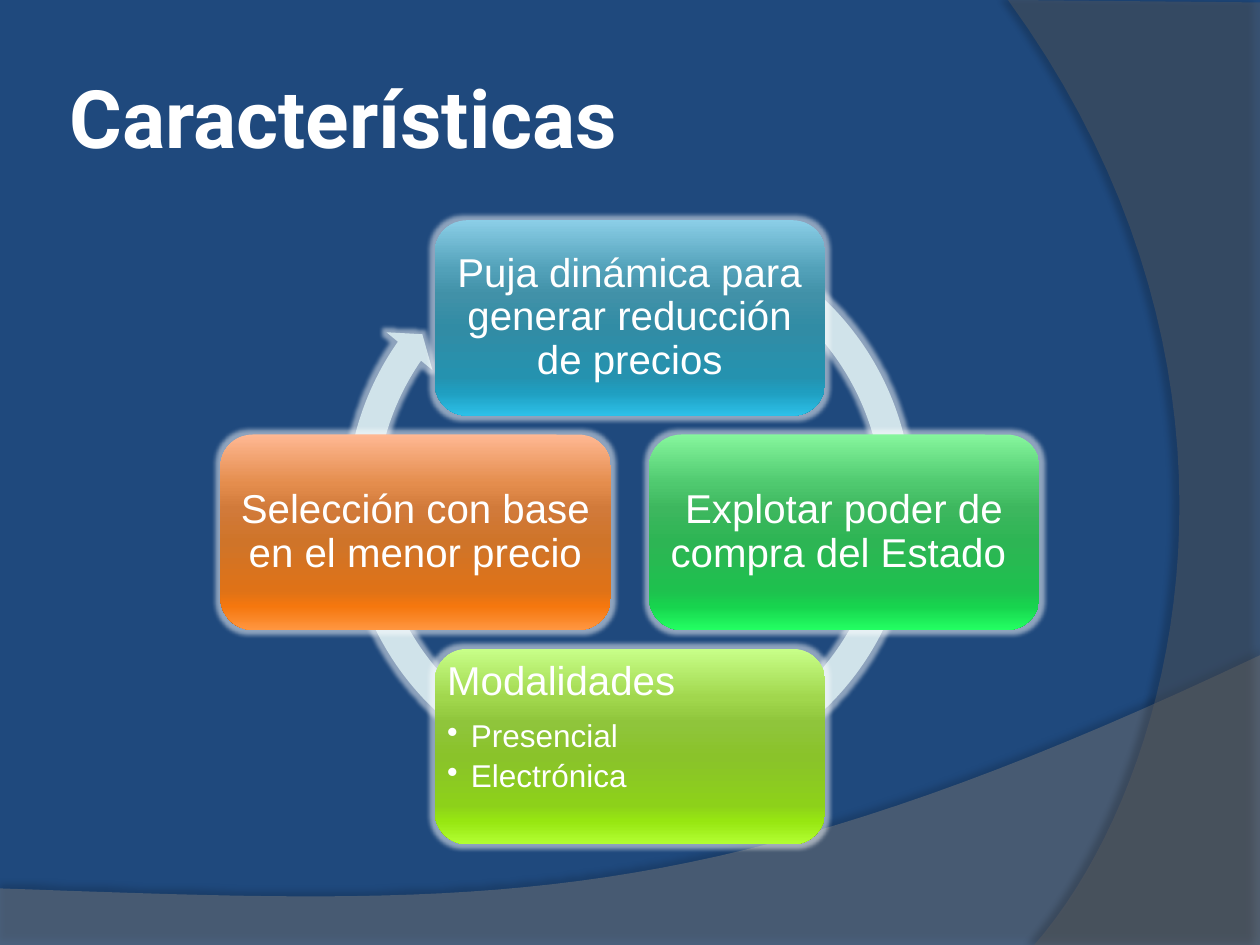
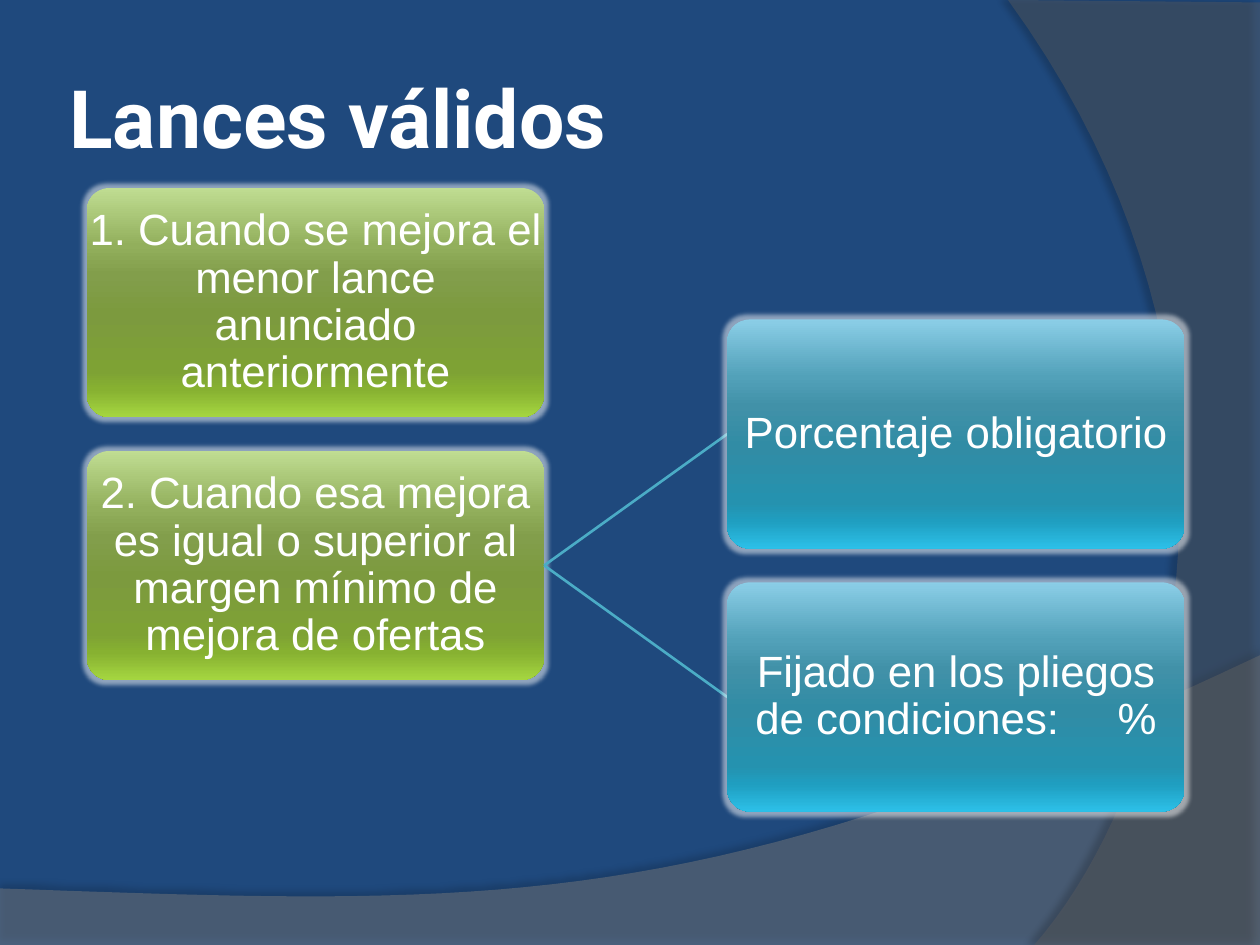
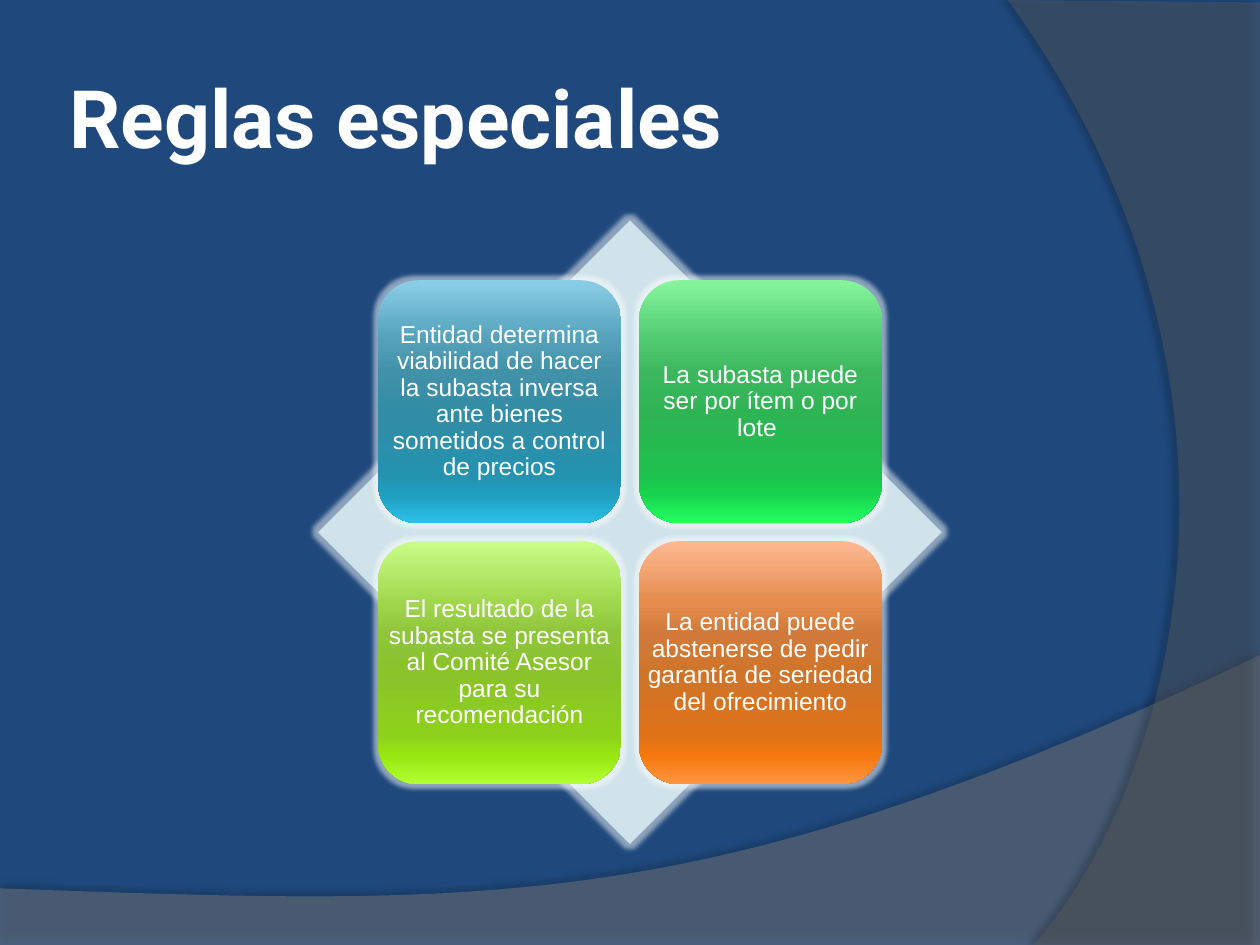
from lxml import etree
from pptx import Presentation
from pptx.dml.color import RGBColor
from pptx.enum import shapes, text
from pptx.oxml import ns
from pptx.util import Cm, Pt

COLORS = {
    "background": "1F497D",
    "wave": "7F7F7F",
    "crescent": "5E5E5E",
    "text": "FFFFFF",
    "glow": "FFFFFF",
    "shadow": "000000",
    "pale": "D0E3EA",
    "line": "4BACC6",
}
GRADIENT_STOPS = (0, 25, 38, 55, 80, 88, 100)
GRADIENTS = {
    "blue": "8BCEE7 52A1B9 4191A8 318CA5 2592AF 1F9EC0 2CC0E8",
    "green": "86F69D 4FC96F 3DB75E 2DB554 1EC14E 17D44E 23FF62",
    "lime": "C8FF89 A1D74D 8FC53B 8AC32A 8DD11A 97E611 B2FF32",
    "orange": "FFB893 E48D4D D17A3A CF7429 DF7217 F5770E FF9640",
    "olive": "C0DD92 92AF5C 829E4B 7C9A3E 7EA234 87B131 A5D640",
}
WIDTH, HEIGHT = 25.4, 19.05
CENTER_X, CENTER_Y = 12.7, 10.73
SHAPE = shapes.MSO_SHAPE


# XML helpers
def add_xml(parent, tag, **attributes):
    values = {name: str(value) for name, value in attributes.items()}
    return etree.SubElement(parent, ns.qn(tag), values)


def add_effect(shape, tag, color, alpha, **attributes):
    shape.shadow.inherit = False
    effects = shape.element.spPr.find(ns.qn("a:effectLst"))
    tint = add_xml(add_xml(effects, tag, **attributes), "a:srgbClr", val=color)
    add_xml(tint, "a:alpha", val=alpha * 1000)


# Text
def write(para, content, size=23, font="Arial", bold=False,
          align=text.PP_ALIGN.CENTER, spacing=0.9, after=0, bullet=False, tab=None):
    para.alignment = align
    para.line_spacing = spacing
    para.space_after = Pt(after)
    properties = para._p.get_or_add_pPr()
    if bullet:
        indent = Cm(0.48)
        properties.set("marL", str(indent))
        properties.set("indent", str(-indent))
        add_xml(properties, "a:buChar", char="•")
    if tab:
        add_xml(add_xml(properties, "a:tabLst"), "a:tab", pos=Cm(tab), algn="l")
    span = para.add_run()
    span.text = content
    span.font.size = Pt(size)
    span.font.name = font
    span.font.bold = bold
    span.font.color.rgb = RGBColor.from_string(COLORS["text"])


def set_frame(frame, inset, anchor):
    frame.word_wrap = True
    frame.auto_size = text.MSO_AUTO_SIZE.NONE
    frame.vertical_anchor = anchor
    frame.margin_left = frame.margin_right = Cm(inset)
    frame.margin_top = frame.margin_bottom = Cm(inset)


def add_label(page, frame_at, inset, anchor=text.MSO_ANCHOR.MIDDLE):
    box = page.shapes.add_textbox(*frame_at)
    set_frame(box.text_frame, inset, anchor)
    return box.text_frame


# Shapes, placed by their centre
def around(x, y, width, height):
    return Cm(x - width / 2), Cm(y - height / 2), Cm(width), Cm(height)


def add_glowing(page, kind, frame_at, adjustments=()):
    shape = page.shapes.add_shape(kind, *frame_at)
    for index, value in enumerate(adjustments):
        shape.adjustments[index] = value
    shape.line.fill.background()
    add_effect(shape, "a:glow", COLORS["glow"], 50, rad=Pt(5))
    return shape


def add_backdrop(page, kind, frame_at, adjustments=()):
    shape = add_glowing(page, kind, frame_at, adjustments)
    shape.fill.solid()
    shape.fill.fore_color.rgb = RGBColor.from_string(COLORS["pale"])


def add_card(page, frame_at, gradient, adjustments=()):
    card = add_glowing(page, SHAPE.ROUNDED_RECTANGLE, frame_at, adjustments)
    card.fill.gradient()
    card.fill.gradient_angle = 270
    stops = card.element.spPr.find(".//" + ns.qn("a:gsLst"))
    stops.clear()
    for position, color in zip(GRADIENT_STOPS, GRADIENTS[gradient].split()):
        add_xml(add_xml(stops, "a:gs", pos=position * 1000), "a:srgbClr", val=color)


def add_text_card(page, frame_at, gradient, content, inset, adjustments=(), **style):
    add_card(page, frame_at, gradient, adjustments)
    write(add_label(page, frame_at, inset).paragraphs[0], content, **style)


def add_link(page, start, end):
    link = page.shapes.add_connector(
        shapes.MSO_CONNECTOR.STRAIGHT, *(Cm(value) for value in start + end))
    link.line.color.rgb = RGBColor.from_string(COLORS["line"])
    link.line.width = Pt(1.5)
    add_xml(link.element.spPr, "a:effectLst")


# Shared design
def curve(a, b, c, d, steps=40):
    """Points along a cubic curve."""
    points = []
    for step in range(steps + 1):
        t = step / steps
        weights = ((1 - t) ** 3, 3 * t * (1 - t) ** 2, 3 * t * t * (1 - t), t ** 3)
        points.append(tuple(sum(w * p[axis] for w, p in zip(weights, (a, b, c, d)))
                            for axis in (0, 1)))
    return points


def add_master_band(page, master, order, points, color, opacity, shade, distance, direction):
    corners = [(Cm(x), Cm(y)) for x, y in points]
    builder = page.shapes.build_freeform(*corners[0])
    builder.add_line_segments(corners[1:], close=True)
    band = builder.convert_to_shape()
    band.fill.solid()
    band.fill.fore_color.rgb = RGBColor.from_string(COLORS[color])
    tint = band.element.spPr.find(ns.qn("a:solidFill"))[0]
    add_xml(tint, "a:alpha", val=opacity * 1000)
    band.line.fill.background()
    add_effect(band, "a:outerShdw", COLORS["shadow"], shade, blurRad=Pt(4),
               dist=Pt(distance), dir=direction * 60000, algn="ctr", rotWithShape=0)
    band.element.nvSpPr.cNvPr.id = 20 + order
    master.shapes.element.insert(2 + order, band.element)


def design_master(deck, page):
    master = deck.slide_master
    master.background.fill.solid()
    master.background.fill.fore_color.rgb = RGBColor.from_string(COLORS["background"])
    wave = curve((WIDTH, 13.21), (14.2, 18.52), (9.93, 18.26), (0, 17.91))
    wave += [(0, HEIGHT), (WIDTH, HEIGHT)]
    crescent = curve((20.85, HEIGHT), (23.75, 15.72), (25.86, 7.62), (20.32, 0))
    crescent += [(WIDTH, 0.05), (WIDTH, HEIGHT)]
    add_master_band(page, master, 0, wave, "wave", 45, 35, 3.5, 270)
    add_master_band(page, master, 1, crescent, "crescent", 40, 45, 4, 180)


def add_page(deck, heading):
    page = deck.slides.add_slide(deck.slide_layouts[5])
    title = page.shapes.title
    title.left, title.top, title.width, title.height = Cm(1.27), Cm(0.76), Cm(20.75), Cm(3.18)
    set_frame(title.text_frame, 0.13, text.MSO_ANCHOR.MIDDLE)
    write(title.text_frame.paragraphs[0], heading, size=46, font="Roboto", bold=True,
          align=text.PP_ALIGN.LEFT, spacing=1.0)
    return page


# Slides
def build_features(page):
    step, width, height, inset = 4.32, 7.87, 3.94, 0.25
    add_backdrop(page, SHAPE.CIRCULAR_ARROW, around(12.69, 10.17, 12.01, 12.01),
                 (0.05, 2.73, 128.92, 179.9, 0.05))
    features = (
        (0, -1, "blue", "Puja dinámica para generar reducción de precios"),
        (1, 0, "green", "Explotar poder de compra del Estado "),
        (-1, 0, "orange", "Selección con base en el menor precio"),
    )
    for column, row, gradient, content in features:
        spot = around(CENTER_X + column * step, CENTER_Y + row * step, width, height)
        add_text_card(page, spot, gradient, content, inset)

    # Card with the list of modes
    spot = around(CENTER_X, CENTER_Y + step, width, height)
    add_card(page, spot, "lime")
    frame = add_label(page, spot, inset, text.MSO_ANCHOR.TOP)
    left = text.PP_ALIGN.LEFT
    write(frame.paragraphs[0], "Modalidades", align=left, after=9)
    for mode in ("Presencial", "Electrónica"):
        write(frame.add_paragraph(), mode, size=18, align=left, after=3.5, bullet=True)


def build_valid_bids(page):
    width, height, step = 9.22, 4.62, 5.3
    left, right, top = 6.36, 19.27, 6.1
    start = (left + width / 2, top + step)
    causes = (
        "1. Cuando se mejora el menor lance anunciado anteriormente",
        "2. Cuando esa mejora es igual o superior al margen mínimo de mejora de ofertas",
    )
    margins = ("Porcentaje obligatorio", "Fijado en los pliegos de condiciones:\t%")
    columns = ((left, top, "olive", causes), (right, top + step / 2, "blue", margins))
    for x, first, gradient, contents in columns:
        for row, content in enumerate(contents):
            y = first + row * step
            if x == right:
                add_link(page, start, (right - width / 2, y))
            add_text_card(page, around(x, y, width, height), gradient, content, 0.05, (0.1,),
                          size=25, tab=7.3 if "\t" in content else None)


def build_special_rules(page):
    side, offset = 4.9, 2.63
    add_backdrop(page, SHAPE.DIAMOND, around(CENTER_X, CENTER_Y, 12.57, 12.57))
    rules = (
        ("blue", "Entidad determina viabilidad de hacer la subasta inversa "
                 "ante bienes sometidos a control de precios"),
        ("green", "La subasta puede ser por ítem o por lote "),
        ("lime", "El resultado de la subasta se presenta al Comité Asesor "
                 "para su recomendación"),
        ("orange", "La entidad puede abstenerse de pedir garantía de seriedad "
                   "del ofrecimiento"),
    )
    for index, (gradient, content) in enumerate(rules):
        row, column = divmod(index, 2)
        spot = around(CENTER_X + (2 * column - 1) * offset,
                      CENTER_Y + (2 * row - 1) * offset, side, side)
        add_text_card(page, spot, gradient, content, 0.15, size=14)


def main():
    deck = Presentation()
    deck.slide_width, deck.slide_height = Cm(WIDTH), Cm(HEIGHT)
    features = add_page(deck, "Características")
    design_master(deck, features)
    build_features(features)
    build_valid_bids(add_page(deck, "Lances válidos"))
    build_special_rules(add_page(deck, "Reglas especiales"))
    deck.save("out.pptx")


if __name__ == "__main__":
    main()
